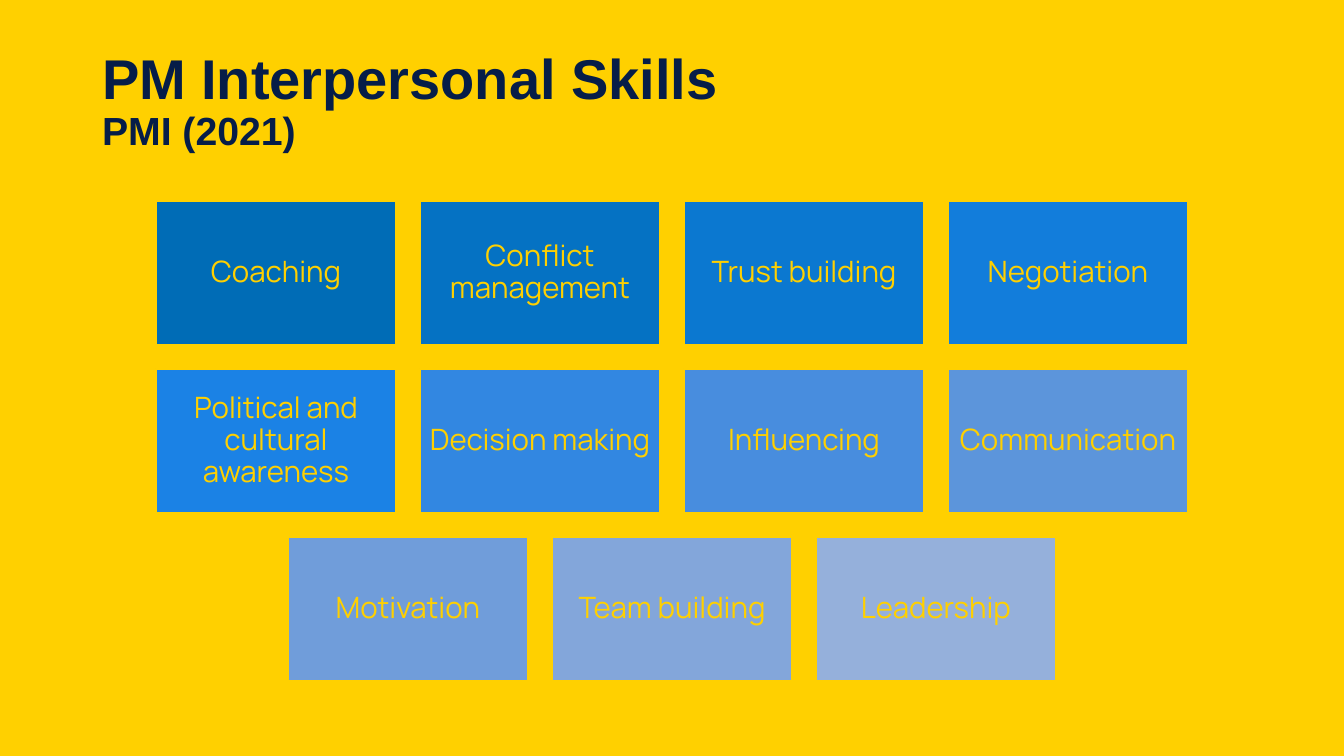
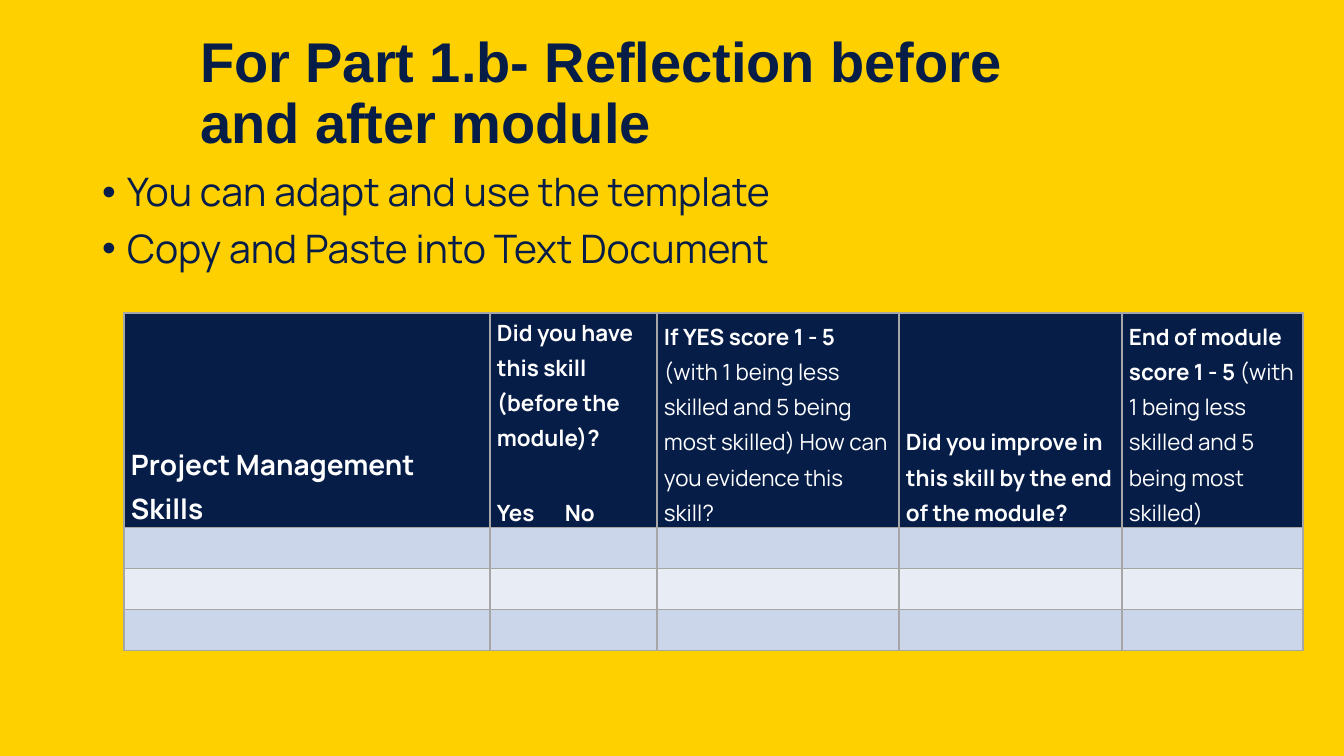
from lxml import etree
from pptx import Presentation
from pptx.dml.color import RGBColor
from pptx.enum.shapes import MSO_SHAPE
from pptx.enum.text import MSO_ANCHOR, MSO_AUTO_SIZE, PP_ALIGN
from pptx.oxml.ns import qn
from pptx.util import Emu, Pt

RECTANGLE = MSO_SHAPE.RECTANGLE
LEFT, CENTER = PP_ALIGN.LEFT, PP_ALIGN.CENTER
TOP, MIDDLE, BOTTOM = MSO_ANCHOR.TOP, MSO_ANCHOR.MIDDLE, MSO_ANCHOR.BOTTOM
NO_AUTO_SIZE = MSO_AUTO_SIZE.NONE

# Style
YELLOW = RGBColor(0xFF, 0xD0, 0x00)
NAVY = RGBColor(0x06, 0x1D, 0x48)
BODY_NAVY = RGBColor(0x07, 0x1D, 0x49)
WHITE = RGBColor(0xFF, 0xFF, 0xFF)
GRAY = RGBColor(0xA6, 0xA6, 0xA6)
BAND_DARK = RGBColor(0xCC, 0xD6, 0xEB)
BAND_LIGHT = RGBColor(0xE7, 0xEC, 0xF5)
TITLE_FONT, TEXT_FONT = "Arial", "Manrope"

SLIDE_WIDTH, SLIDE_HEIGHT = 1344, 756
EMU_PER_PX = 914400 / 100.8
TITLE_ONLY, TITLE_AND_CONTENT = 5, 1


def px(length):
    return Emu(round(length * EMU_PER_PX))


def write(paragraph, text, *, size, color, font=TEXT_FONT, bold=False,
          align=LEFT, line_spacing=0.9, before=0, bullet=None, tab=None):
    """Append a run to a paragraph and set the format of both."""
    properties = paragraph._p.get_or_add_pPr()
    if bullet:
        properties.set("marL", str(px(25)))
        properties.set("indent", str(-px(25)))
        etree.SubElement(properties, qn("a:buFont"), typeface="Arial")
        etree.SubElement(properties, qn("a:buChar"), char=bullet)
    if tab:
        tabs = etree.SubElement(properties, qn("a:tabLst"))
        etree.SubElement(tabs, qn("a:tab"), pos=str(px(tab)), algn="l")
    paragraph.alignment = align
    paragraph.line_spacing = line_spacing
    paragraph.space_before = Pt(before)
    paragraph.space_after = Pt(0)
    run = paragraph.add_run()
    run.text = text
    run.font.name = font
    run.font.size = Pt(size)
    run.font.bold = bold
    run.font.color.rgb = color


def next_paragraph(frame, index):
    return frame.add_paragraph() if index else frame.paragraphs[0]


class Deck:
    def __init__(self):
        self.presentation = Presentation()
        self.presentation.slide_width = px(SLIDE_WIDTH)
        self.presentation.slide_height = px(SLIDE_HEIGHT)
        background = self.presentation.slide_master.background.fill
        background.solid()
        background.fore_color.rgb = YELLOW
        self.slide = None

    def add_slide(self, layout):
        layouts = self.presentation.slide_layouts
        self.slide = self.presentation.slides.add_slide(layouts[layout])

    def place(self, placeholder, box, anchor):
        (placeholder.left, placeholder.top,
         placeholder.width, placeholder.height) = map(px, box)
        frame = placeholder.text_frame
        frame.word_wrap = True
        frame.auto_size = NO_AUTO_SIZE
        frame.vertical_anchor = anchor
        return frame

    def title(self, box, *lines):
        frame = self.place(self.slide.shapes.title, box, MIDDLE)
        for index, (text, size) in enumerate(lines):
            write(next_paragraph(frame, index), text, size=size,
                  color=NAVY, font=TITLE_FONT, bold=True)

    def bullets(self, box, items):
        frame = self.place(self.slide.placeholders[1], box, TOP)
        for index, text in enumerate(items):
            write(next_paragraph(frame, index), text, size=28,
                  color=BODY_NAVY, bullet="•", before=10 if index else 0)

    def tile(self, box, text, color):
        shape = self.slide.shapes.add_shape(RECTANGLE, *map(px, box))
        shape.shadow.inherit = False
        shape.fill.solid()
        shape.fill.fore_color.rgb = color
        shape.line.color.rgb = YELLOW
        shape.line.width = Pt(1)
        frame = shape.text_frame
        frame.word_wrap = True
        frame.vertical_anchor = MIDDLE
        frame.margin_left = frame.margin_right = px(9)
        frame.margin_top = frame.margin_bottom = px(9)
        write(frame.paragraphs[0], text, size=21, color=YELLOW, align=CENTER)

    def table(self, left, top, widths, heights, headers, bands):
        table = self.slide.shapes.add_table(
            len(heights), len(widths), px(left), px(top),
            px(sum(widths)), px(sum(heights))).table
        table.horz_banding = False
        for column, width in zip(table.columns, widths):
            column.width = px(width)
        for row, height, color in zip(table.rows, heights, [NAVY, *bands]):
            row.height = px(height)
            for cell in row.cells:
                self.style_cell(cell, color)
        for cell, paragraphs in zip(table.rows[0].cells, headers):
            for index, runs in enumerate(paragraphs):
                paragraph = next_paragraph(cell.text_frame, index)
                for text, options in runs:
                    write(paragraph, text, color=WHITE, line_spacing=1.15,
                          **{"size": 16, "bold": True, **options})

    def style_cell(self, cell, color):
        cell.margin_left = cell.margin_right = px(7)
        cell.margin_top = cell.margin_bottom = 0
        cell.vertical_anchor = BOTTOM
        properties = cell._tc.get_or_add_tcPr()
        for side in ("a:lnL", "a:lnR", "a:lnT", "a:lnB"):
            line = etree.SubElement(properties, qn(side), w=str(Pt(1)))
            fill = etree.SubElement(line, qn("a:solidFill"))
            etree.SubElement(fill, qn("a:srgbClr"), val=str(GRAY))
        cell.fill.solid()
        cell.fill.fore_color.rgb = color


# Skills, row by row, from dark to pale blue
SKILL_ROWS = [
    [("Coaching", RGBColor(0x00, 0x6C, 0xB6)),
     ("Conflict management", RGBColor(0x05, 0x72, 0xC3)),
     ("Trust building", RGBColor(0x0B, 0x78, 0xD0)),
     ("Negotiation", RGBColor(0x12, 0x7D, 0xDB))],
    [("Political and cultural awareness", RGBColor(0x1B, 0x82, 0xE5)),
     ("Decision making", RGBColor(0x32, 0x87, 0xE1)),
     ("Influencing", RGBColor(0x48, 0x8D, 0xDE)),
     ("Communication", RGBColor(0x5C, 0x95, 0xDB))],
    [("Motivation", RGBColor(0x70, 0x9D, 0xDA)),
     ("Team building", RGBColor(0x83, 0xA6, 0xDA)),
     ("Leadership", RGBColor(0x95, 0xB0, 0xDB))],
]

# Table headers: paragraphs of runs with their own format
PLAIN = {"bold": False}
HEADERS = [
    [[("Project Management Skills", {"size": 20})]],
    [[("Did you have this skill (before the module)?", {})],
     [("Yes\tNo", {"before": 28, "tab": 68})]],
    [[("If YES score 1 - 5 ", {}),
      ("(with 1 being less skilled and 5 being most skilled) "
       "How can you evidence this skill?", PLAIN)]],
    [[("Did you improve in this skill by the end of the module?", {})]],
    [[("End of module score 1 - 5 ", {}),
      ("(with 1 being less skilled and 5 being most skilled)", PLAIN)]],
]


def skills_slide(deck):
    deck.add_slide(TITLE_ONLY)
    deck.title((92, 30, 990, 146),
               ("PM Interpersonal Skills", 40), ("PMI (2021)", 28))
    width, height, gap, top = 240, 144, 24, 201
    for row, skills in enumerate(SKILL_ROWS):
        row_width = len(skills) * (width + gap) - gap
        left = (SLIDE_WIDTH - row_width) // 2
        for column, (skill, color) in enumerate(skills):
            deck.tile((left + column * (width + gap),
                       top + row * (height + gap), width, height),
                      skill, color)


def reflection_slide(deck):
    deck.add_slide(TITLE_AND_CONTENT)
    deck.title((190, 22, 840, 146),
               ("For Part 1.b- Reflection before and after module", 40))
    deck.bullets((92, 168, 1159, 124),
                 ["You can adapt and use the template",
                  "Copy and Paste into Text Document"])
    deck.table(124, 313, [366, 167, 242, 223, 181], [214, 41, 41, 41],
               HEADERS, [BAND_DARK, BAND_LIGHT, BAND_DARK])


def main():
    deck = Deck()
    skills_slide(deck)
    reflection_slide(deck)
    deck.presentation.save("out.pptx")


if __name__ == "__main__":
    main()
